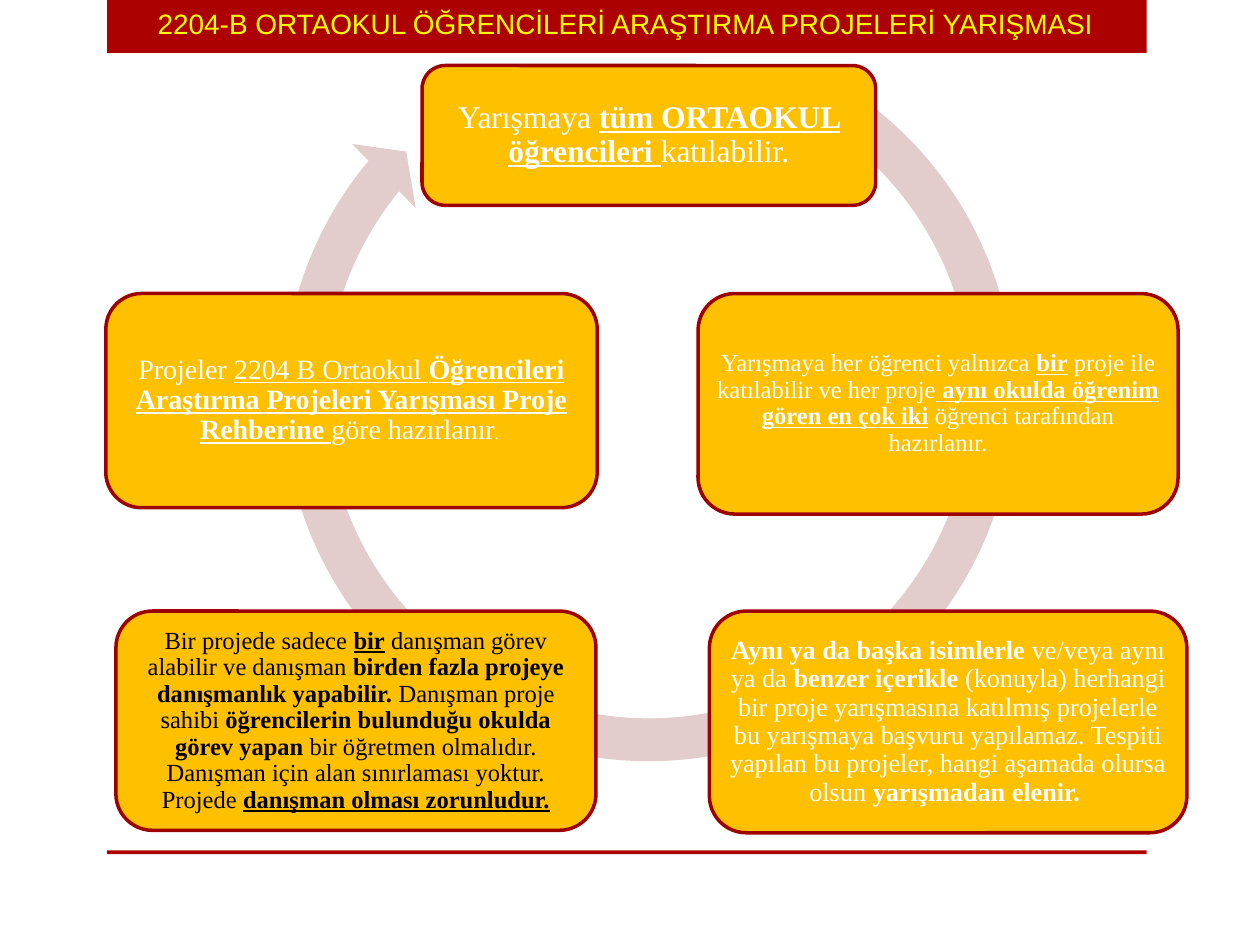
import pptx
import pptx.util
from pptx.dml.color import RGBColor
from pptx.enum.shapes import MSO_SHAPE
from pptx.enum.text import MSO_ANCHOR, MSO_AUTO_SIZE, PP_ALIGN

RED = RGBColor(0xAD, 0x01, 0x01)
DARK_RED = RGBColor(0x9D, 0x01, 0x01)
PINK = RGBColor(0xE3, 0xCC, 0xCC)
GOLD = RGBColor(0xFF, 0xC0, 0x00)
YELLOW = RGBColor(0xFF, 0xFF, 0x00)
WHITE = RGBColor(0xFF, 0xFF, 0xFF)
BLACK = RGBColor(0, 0, 0)

TITLE = "2204-B ORTAOKUL ÖĞRENCİLERİ ARAŞTIRMA PROJELERİ YARIŞMASI"
BARS = [(85, 0, 825, 42), (85, 675, 825, 3)]
RING = (206, 5, 618, 618)
RING_ADJUSTMENTS = (0.055, 3.307, 131.792, 177.609, 0.058)

# Box, inset, size in points, colour, runs as (text, style): b bold, u underlined
CARDS = [
    ((335, 52, 360, 111), 7, 18, WHITE, [
        ("Yarışmaya ", ""), ("tüm ORTAOKUL öğrencileri ", "bu"),
        ("katılabilir.", "")]),
    ((554, 233, 381, 175), 6, 14, WHITE, [
        ("Yarışmaya her öğrenci yalnızca ", ""), ("bir", "bu"),
        (" proje ile katılabilir ve her proje", ""), (" ", "u"),
        ("aynı okulda öğrenim gören en çok iki", "bu"),
        (" öğrenci tarafından hazırlanır.", "")]),
    ((563, 485, 379, 176), 6, 15, WHITE, [
        ("Aynı ya da başka isimlerle ", "b"), ("ve/veya aynı ya da ", ""),
        ("benzer içerikle ", "b"),
        ("(konuyla) herhangi bir proje yarışmasına katılmış projelerle bu "
         "yarışmaya başvuru yapılamaz. Tespiti yapılan bu projeler, hangi "
         "aşamada olursa olsun ", ""),
        ("yarışmadan elenir. ", "b")]),
    ((92, 485, 381, 174), 6, 14, BLACK, [
        ("Bir projede sadece ", ""), ("bir", "bu"),
        (" danışman görev alabilir ve danışman ", ""),
        ("birden fazla projeye danışmanlık yapabilir.", "b"),
        (" Danışman proje sahibi ", ""),
        ("öğrencilerin bulunduğu okulda görev yapan", "b"),
        (" bir öğretmen olmalıdır. Danışman için alan sınırlaması yoktur. "
         "Projede ", ""),
        ("danışman olması zorunludur.", "bu")]),
    ((84, 233, 390, 170), 7, 16, WHITE, [
        ("Projeler ", ""), ("2204 B Ortaokul ", "u"),
        ("Öğrencileri Araştırma Projeleri Yarışması Proje Rehberine ", "bu"),
        ("göre hazırlanır", ""), (". ", "small")]),
]


def px(n):
    """Convert px, at 100 to the inch, into EMU."""
    return pptx.util.Emu(n * 9144)


def add_filled(s, kind, box, fill):
    sp = s.shapes.add_shape(kind, *map(px, box))
    sp.shadow.inherit = False
    sp.fill.solid()
    sp.fill.fore_color.rgb = fill
    sp.line.fill.background()
    return sp


def format_paragraph(p, name, size, color):
    p.alignment = PP_ALIGN.CENTER
    p.font.name = name
    p.font.size = pptx.util.Pt(size)
    p.font.color.rgb = color


def add_card(s, box, inset, size, color, runs):
    sp = add_filled(s, MSO_SHAPE.ROUNDED_RECTANGLE, box, GOLD)
    sp.line.color.rgb = DARK_RED
    sp.line.width = pptx.util.Pt(2)
    tf = sp.text_frame
    tf.word_wrap = True
    tf.vertical_anchor = MSO_ANCHOR.MIDDLE
    tf.margin_left = tf.margin_right = px(inset)
    tf.margin_top = tf.margin_bottom = px(inset)
    p = tf.paragraphs[0]
    format_paragraph(p, "Times New Roman", size, color)
    p.line_spacing = 0.9
    for text, style in runs:
        r = p.add_run()
        r.text = text
        if style == "small":
            r.font.size = pptx.util.Pt(9)
            continue
        r.font.bold = "b" in style
        r.font.underline = "u" in style


def set_title(s):
    """Place the title in front of the red bar."""
    title = s.shapes.title
    title.left, title.top, title.width, title.height = map(px, (83, 0, 827, 37))
    tf = title.text_frame
    tf.text = TITLE
    tf.word_wrap = True
    tf.auto_size = MSO_AUTO_SIZE.NONE
    tf.vertical_anchor = MSO_ANCHOR.TOP
    format_paragraph(tf.paragraphs[0], "Arial", 16, YELLOW)
    title.element.getparent().append(title.element)


def main():
    prs = pptx.Presentation()
    prs.slide_width, prs.slide_height = px(1000), px(750)
    s = prs.slides.add_slide(prs.slide_layouts.get_by_name("Title Only"))
    for box in BARS:
        add_filled(s, MSO_SHAPE.RECTANGLE, box, RED)
    ring = add_filled(s, MSO_SHAPE.CIRCULAR_ARROW, RING, PINK)
    for i, value in enumerate(RING_ADJUSTMENTS):
        ring.adjustments[i] = value
    for card in CARDS:
        add_card(s, *card)
    set_title(s)
    prs.save("out.pptx")


if __name__ == "__main__":
    main()
